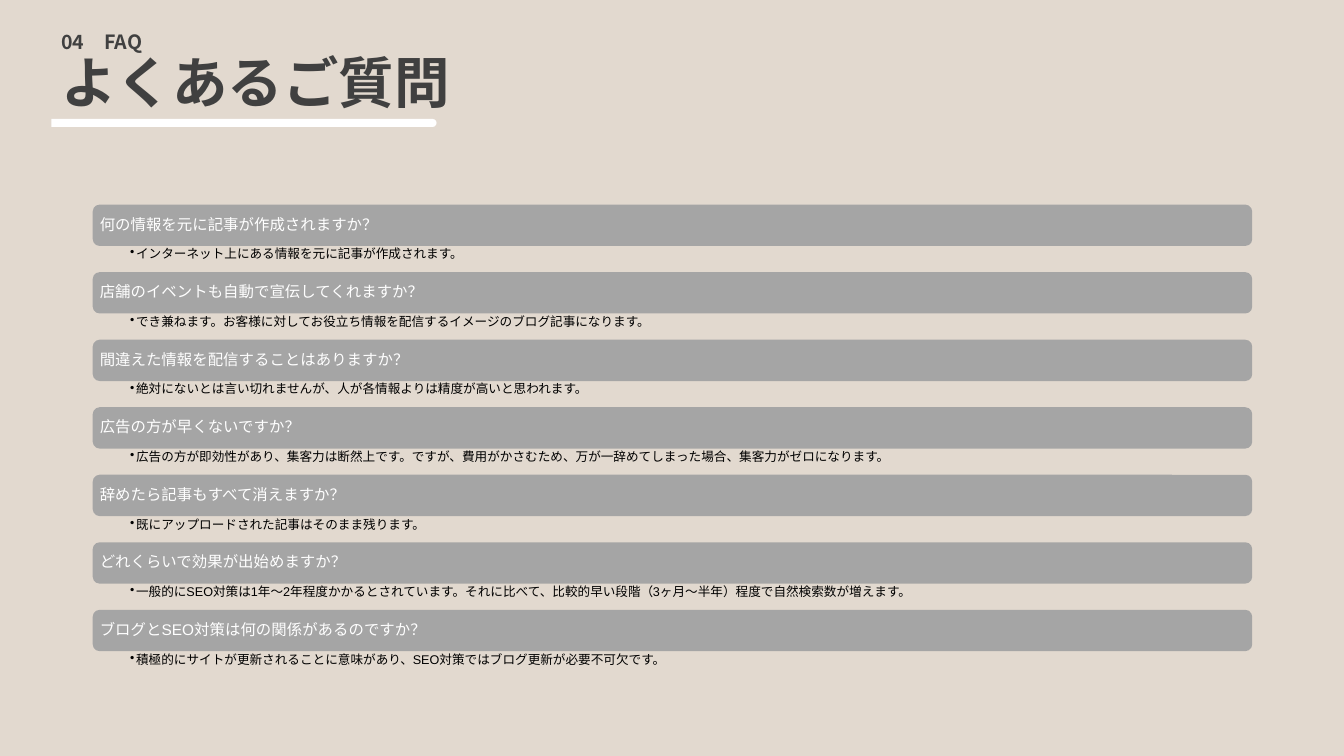
import dataclasses

import pptx
import pptx.dml.color
import pptx.enum.shapes
import pptx.enum.text
import pptx.oxml.ns
import pptx.shapes.autoshape
import pptx.slide
import pptx.text.text
import pptx.util
from lxml import etree

Inches = pptx.util.Inches
Shape = pptx.shapes.autoshape.Shape
Kind = pptx.enum.shapes.MSO_SHAPE
Anchor = pptx.enum.text.MSO_ANCHOR

HEAD_FONT = "Noto Sans CJK JP"
BODY_FONT = "Arial"
DARK, WHITE, BLACK, GRAY, SAND = "404040", "FFFFFF", "000000", "A5A5A5", "E2D9CF"

LEFT, TOP, WIDTH = 0.92, 2.03, 11.5
BAR, PITCH = 0.41, 0.67


@dataclasses.dataclass
class Faq:
    ask: str
    reply: str


FAQS = [
    Faq("何の情報を元に記事が作成されますか？",
        "インターネット上にある情報を元に記事が作成されます。"),
    Faq("店舗のイベントも自動で宣伝してくれますか？",
        "でき兼ねます。お客様に対してお役立ち情報を配信するイメージのブログ記事になります。"),
    Faq("間違えた情報を配信することはありますか？",
        "絶対にないとは言い切れませんが、人が各情報よりは精度が高いと思われます。"),
    Faq("広告の方が早くないですか？",
        "広告の方が即効性があり、集客力は断然上です。ですが、費用がかさむため、"
        "万が一辞めてしまった場合、集客力がゼロになります。"),
    Faq("辞めたら記事もすべて消えますか？",
        "既にアップロードされた記事はそのまま残ります。"),
    Faq("どれくらいで効果が出始めますか？",
        "一般的にSEO対策は1年～2年程度かかるとされています。それに比べて、"
        "比較的早い段階（3ヶ月～半年）程度で自然検索数が増えます。"),
    Faq("ブログとSEO対策は何の関係があるのですか？",
        "積極的にサイトが更新されることに意味があり、SEO対策ではブログ更新が必要不可欠です。"),
]


def color(code: str) -> pptx.dml.color.RGBColor:
    return pptx.dml.color.RGBColor.from_string(code)


def place(shape: Shape, x: float, y: float, w: float, h: float) -> None:
    shape.left, shape.top = Inches(x), Inches(y)
    shape.width, shape.height = Inches(w), Inches(h)


def paint(shape: Shape, code: str) -> None:
    shape.shadow.inherit = False
    shape.fill.solid()
    shape.fill.fore_color.rgb = color(code)
    shape.line.fill.background()


def write(shape: Shape, text: str, size: float, code: str, face: str, bold: bool,
          anchor: Anchor, pads: tuple[float, float, float, float],
          ) -> pptx.text.text._Paragraph:
    """Fill a shape with one left-aligned paragraph; pads run left, top, right, bottom."""
    frame = shape.text_frame
    frame.word_wrap = True
    frame.auto_size = pptx.enum.text.MSO_AUTO_SIZE.NONE
    frame.vertical_anchor = anchor
    frame.margin_left, frame.margin_top, frame.margin_right, frame.margin_bottom = map(
        Inches, pads)
    para = frame.paragraphs[0]
    para.text = text
    para.alignment = pptx.enum.text.PP_ALIGN.LEFT
    para.line_spacing = 0.9
    font = para.font
    font.name, font.size, font.bold = face, pptx.util.Pt(size), bold
    font.color.rgb = color(code)
    # East Asian glyphs take their face from a:ea
    asian = etree.SubElement(font._element, pptx.oxml.ns.qn("a:ea"))
    asian.set("typeface", HEAD_FONT)
    return para


def bullet(para: pptx.text.text._Paragraph, indent: float) -> None:
    props = para._p.get_or_add_pPr()
    props.set("marL", str(Inches(indent)))
    props.set("indent", str(Inches(-indent)))
    mark = etree.Element(pptx.oxml.ns.qn("a:buChar"))
    mark.set("char", "•")
    props.find(pptx.oxml.ns.qn("a:defRPr")).addprevious(mark)


def draw_faq(slide: pptx.slide.Slide, faq: Faq, y: float) -> None:
    bar = slide.shapes.add_shape(Kind.ROUNDED_RECTANGLE, 0, 0, 0, 0)
    place(bar, LEFT, y, WIDTH, BAR)
    paint(bar, GRAY)
    write(bar, faq.ask, 11, WHITE, BODY_FONT, False, Anchor.MIDDLE,
          (0.05, 0.05, 0.05, 0.05))
    note = slide.shapes.add_textbox(0, 0, 0, 0)
    place(note, LEFT, y + BAR, WIDTH, PITCH - BAR)
    para = write(note, faq.reply, 9, BLACK, BODY_FONT, False, Anchor.TOP,
                 (0.37, 0.02, 0.09, 0.02))
    bullet(para, 0.06)


def main() -> None:
    deck = pptx.Presentation()
    deck.slide_width, deck.slide_height = Inches(13.33), Inches(7.5)
    slide = deck.slides.add_slide(deck.slide_layouts[5])
    slide.background.fill.solid()
    slide.background.fill.fore_color.rgb = color(SAND)

    # Heading with its underline and section label
    rule = slide.shapes.add_shape(Kind.ROUND_2_SAME_RECTANGLE, 0, 0, 0, 0)
    place(rule, 2.38, -0.69, 0.08, 3.82)
    rule.rotation = 90
    rule.adjustments[0] = 0.5
    paint(rule, WHITE)
    title = slide.shapes.title
    place(title, 0.51, 0.53, 11.5, 0.63)
    write(title, "よくあるご質問", 39.6, DARK, HEAD_FONT, True, Anchor.MIDDLE,
          (0.1, 0.05, 0.1, 0.05))
    label = slide.shapes.add_textbox(0, 0, 0, 0)
    place(label, 0.51, 0.27, 6.43, 0.24)
    write(label, "04　FAQ", 14, DARK, HEAD_FONT, True, Anchor.TOP,
          (0.1, 0.05, 0.1, 0.05))

    # Questions and answers
    for row, faq in enumerate(FAQS):
        draw_faq(slide, faq, TOP + row * PITCH)

    deck.save("out.pptx")


if __name__ == "__main__":
    main()
